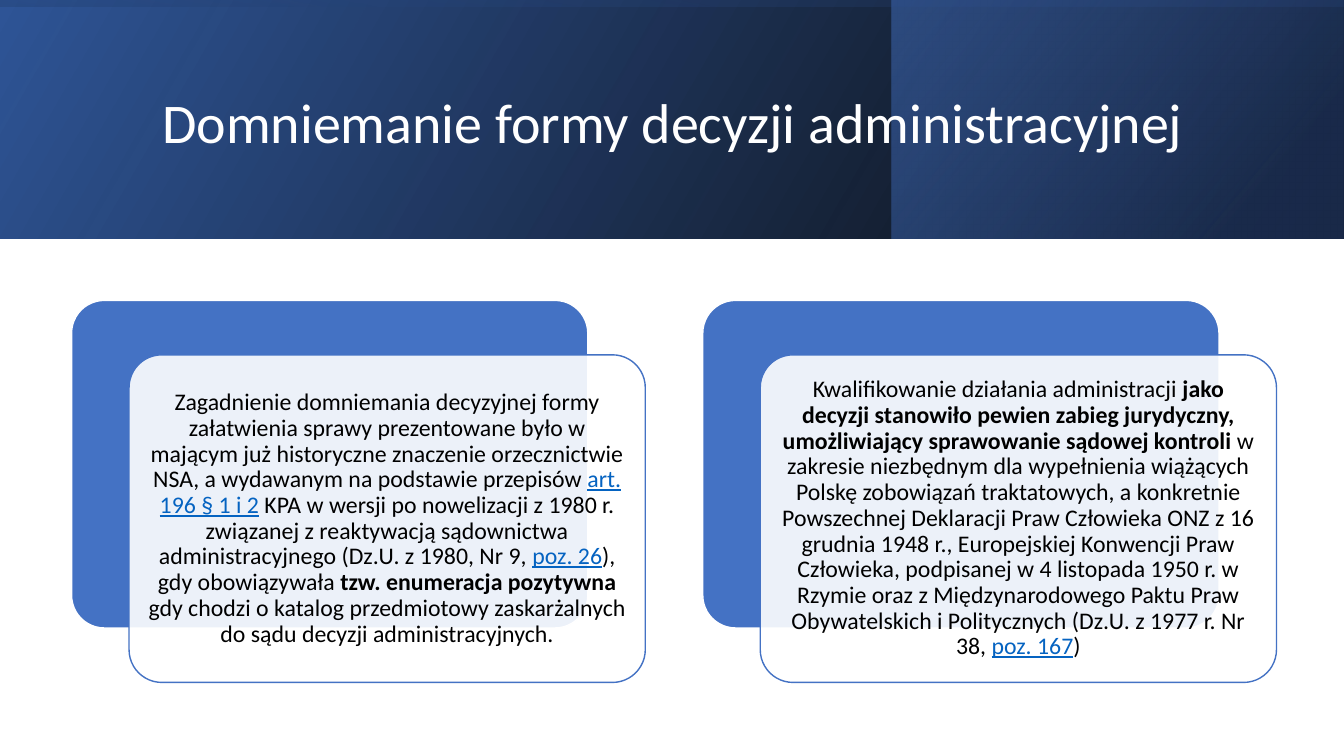
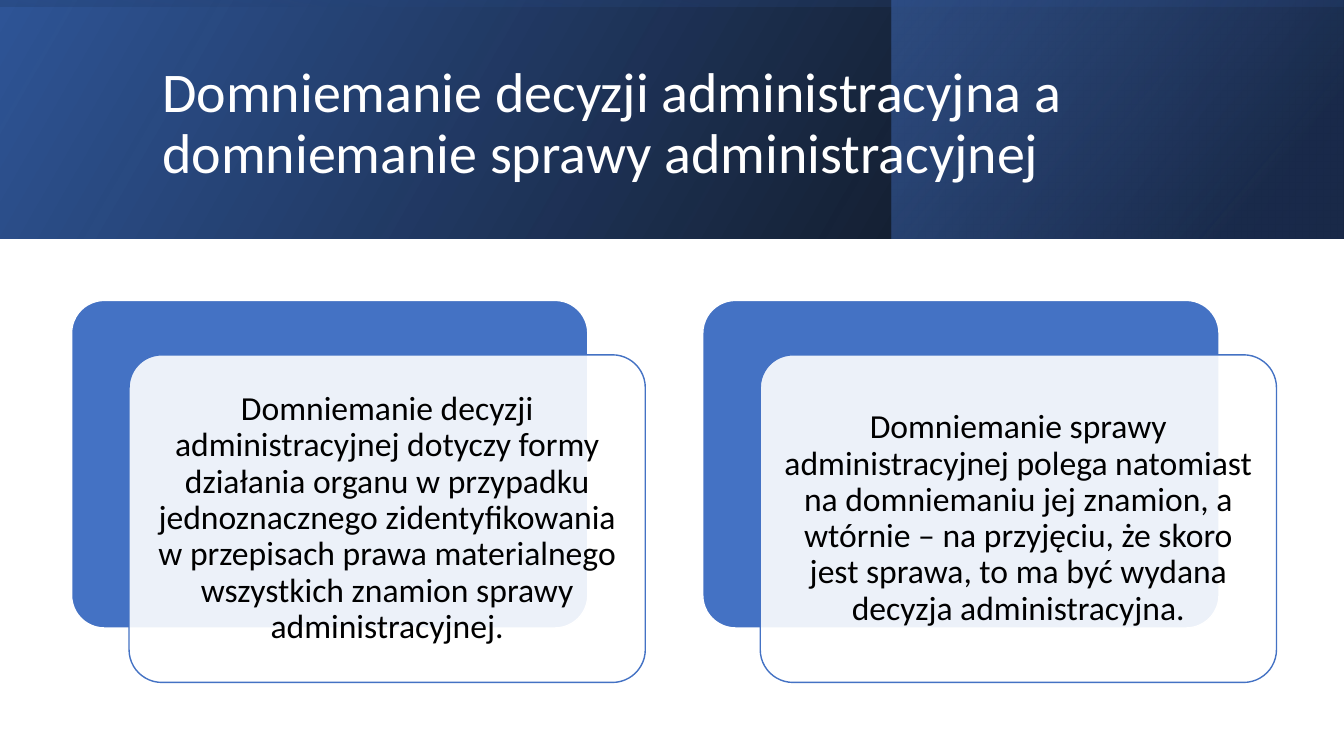
import lxml.etree
import pptx
import pptx.dml.color
import pptx.enum.shapes
import pptx.enum.text
import pptx.oxml.ns
import pptx.util

Inches = pptx.util.Inches
FONT = "Calibri"
COLORS = {
    "white": "FFFFFF",
    "black": "000000",
    "accent": "4472C4",
    "deep": "2F5597",
    "navy": "203864",
    "link": "0563C1",
}

# Header bands: box, rotation, clockwise gradient angle, stops (position, color, opacity)
BANDS = [
    ((0, 0, 13.33, 2.37), 0, 330, [(0, "black", 96), (100, "deep", 100)]),
    ((8.84, 0, 4.48, 2.37), 0, 320, [(19, "navy", 68), (100, "accent", 48)]),
    ((5.48, -5.48, 2.37, 13.33), 270, 350, [(23, "deep", 16), (99, "black", 45)]),
]

# Card pairs: a back panel and a front panel shifted down and right
CARD_LEFT, CARD_TOP = 0.71, 2.98
CARD_WIDTH, CARD_HEIGHT = 5.12, 3.25
CARD_PITCH = 6.26
FRONT_SHIFT_X, FRONT_SHIFT_Y = 0.57, 0.54

# Each card is a list of (text, style) runs
SLIDES = [
    {
        "title": "Domniemanie formy decyzji administracyjnej",
        "size": 17,
        "margin": 0.07,
        "cards": [
            [
                ("Zagadnienie domniemania decyzyjnej formy załatwienia sprawy "
                 "prezentowane było w mającym już historyczne znaczenie orzecznictwie "
                 "NSA, a wydawanym na podstawie przepisów ", "plain"),
                ("art. 196 § 1 i 2", "link"),
                (" KPA w wersji po nowelizacji z 1980 r. związanej z reaktywacją "
                 "sądownictwa administracyjnego (Dz.U. z 1980, Nr 9, ", "plain"),
                ("poz. 26", "link"),
                ("), gdy obowiązywała ", "plain"),
                ("tzw. enumeracja pozytywna ", "bold"),
                ("gdy chodzi o katalog przedmiotowy zaskarżalnych do sądu decyzji "
                 "administracyjnych.", "plain"),
            ],
            [
                ("Kwalifikowanie działania administracji ", "plain"),
                ("jako decyzji stanowiło pewien zabieg jurydyczny, umożliwiający "
                 "sprawowanie sądowej kontroli ", "bold"),
                ("w zakresie niezbędnym dla wypełnienia wiążących Polskę zobowiązań "
                 "traktatowych, a konkretnie Powszechnej Deklaracji Praw Człowieka ONZ "
                 "z 16 grudnia 1948 r., Europejskiej Konwencji Praw Człowieka, "
                 "podpisanej w 4 listopada 1950 r. w Rzymie oraz z Międzynarodowego "
                 "Paktu Praw Obywatelskich i Politycznych (Dz.U. z 1977 r. Nr 38, ",
                 "plain"),
                ("poz. 167", "link"),
                (")", "plain"),
            ],
        ],
    },
    {
        "title": "Domniemanie decyzji administracyjna a domniemanie sprawy "
                 "administracyjnej",
        "size": 24,
        "margin": 0.1,
        "cards": [
            [("Domniemanie decyzji administracyjnej dotyczy formy działania organu "
              "w przypadku jednoznacznego zidentyfikowania w przepisach prawa "
              "materialnego wszystkich znamion sprawy administracyjnej.", "plain")],
            [("Domniemanie sprawy administracyjnej polega natomiast na domniemaniu "
              "jej znamion, a wtórnie – na przyjęciu, że skoro jest sprawa, to ma być "
              "wydana decyzja administracyjna.", "plain")],
        ],
    },
]


def rgb(name):
    return pptx.dml.color.RGBColor.from_string(COLORS[name])


def set_opacity(fill_element, percent):
    """Give the first RGB colour inside an XML element an opacity."""
    if percent < 100:
        color = fill_element.find(".//" + pptx.oxml.ns.qn("a:srgbClr"))
        alpha = lxml.etree.SubElement(color, pptx.oxml.ns.qn("a:alpha"))
        alpha.set("val", str(percent * 1000))


def add_box(slide, kind, box):
    shape = slide.shapes.add_shape(kind, *(Inches(length) for length in box))
    shape.shadow.inherit = False
    return shape


def add_band(slide, box, rotation, angle, stops):
    band = add_box(slide, pptx.enum.shapes.MSO_SHAPE.RECTANGLE, box)
    band.rotation = rotation
    band.element.spPr.xfrm.set("flipH", "1")
    band.line.fill.background()
    band.fill.gradient()
    band.fill.gradient_angle = 360 - angle  # python-pptx counts counterclockwise
    gradient = band.element.spPr.find(pptx.oxml.ns.qn("a:gradFill"))
    stop_elements = gradient.findall(".//" + pptx.oxml.ns.qn("a:gs"))
    for stop, element, (position, color, opacity) in zip(
            band.fill.gradient_stops, stop_elements, stops):
        stop.position = position / 100
        stop.color.rgb = rgb(color)
        set_opacity(element, opacity)


def add_panel(slide, box, fill, line, opacity=100):
    panel = add_box(slide, pptx.enum.shapes.MSO_SHAPE.ROUNDED_RECTANGLE, box)
    panel.adjustments[0] = 0.1
    panel.fill.solid()
    panel.fill.fore_color.rgb = rgb(fill)
    set_opacity(panel.element.spPr, opacity)
    panel.line.color.rgb = rgb(line)
    panel.line.width = pptx.util.Pt(1)
    return panel


def write_text(shape, runs, size, color="black", align="LEFT", margin=0.1):
    """Fill a shape with one paragraph of styled runs."""
    frame = shape.text_frame
    frame.word_wrap = True
    frame.auto_size = pptx.enum.text.MSO_AUTO_SIZE.NONE
    frame.vertical_anchor = pptx.enum.text.MSO_ANCHOR.MIDDLE
    frame.margin_left = frame.margin_right = Inches(margin)
    frame.margin_top = frame.margin_bottom = Inches(margin)
    paragraph = frame.paragraphs[0]
    paragraph.alignment = pptx.enum.text.PP_ALIGN[align]
    paragraph.line_spacing = 0.9
    for text, style in runs:
        run = paragraph.add_run()
        run.text = text
        run.font.name = FONT
        run.font.size = pptx.util.Pt(size)
        run.font.bold = style == "bold"
        run.font.underline = style == "link"
        run.font.color.rgb = rgb("link" if style == "link" else color)


def add_title(slide, text):
    title = slide.shapes.title
    title.left, title.top = Inches(1.51), Inches(0.38)
    title.width, title.height = Inches(10.63), Inches(1.72)
    write_text(title, [(text, "plain")], size=40, color="white")
    # Bring the title in front of the bands
    title.element.getparent().append(title.element)


def add_card(slide, index, runs, size, margin):
    left = CARD_LEFT + index * CARD_PITCH
    add_panel(slide, (left, CARD_TOP, CARD_WIDTH, CARD_HEIGHT), "accent", "white")
    front_box = (left + FRONT_SHIFT_X, CARD_TOP + FRONT_SHIFT_Y,
                 CARD_WIDTH, CARD_HEIGHT)
    front = add_panel(slide, front_box, "white", "accent", opacity=90)
    write_text(front, runs, size, align="CENTER", margin=margin)


def main():
    presentation = pptx.Presentation()
    presentation.slide_width = Inches(13.33)
    presentation.slide_height = Inches(7.5)
    title_only = presentation.slide_layouts[5]
    for content in SLIDES:
        slide = presentation.slides.add_slide(title_only)
        for band in BANDS:
            add_band(slide, *band)
        add_title(slide, content["title"])
        for index, runs in enumerate(content["cards"]):
            add_card(slide, index, runs, content["size"], content["margin"])
    presentation.save("out.pptx")


if __name__ == "__main__":
    main()
